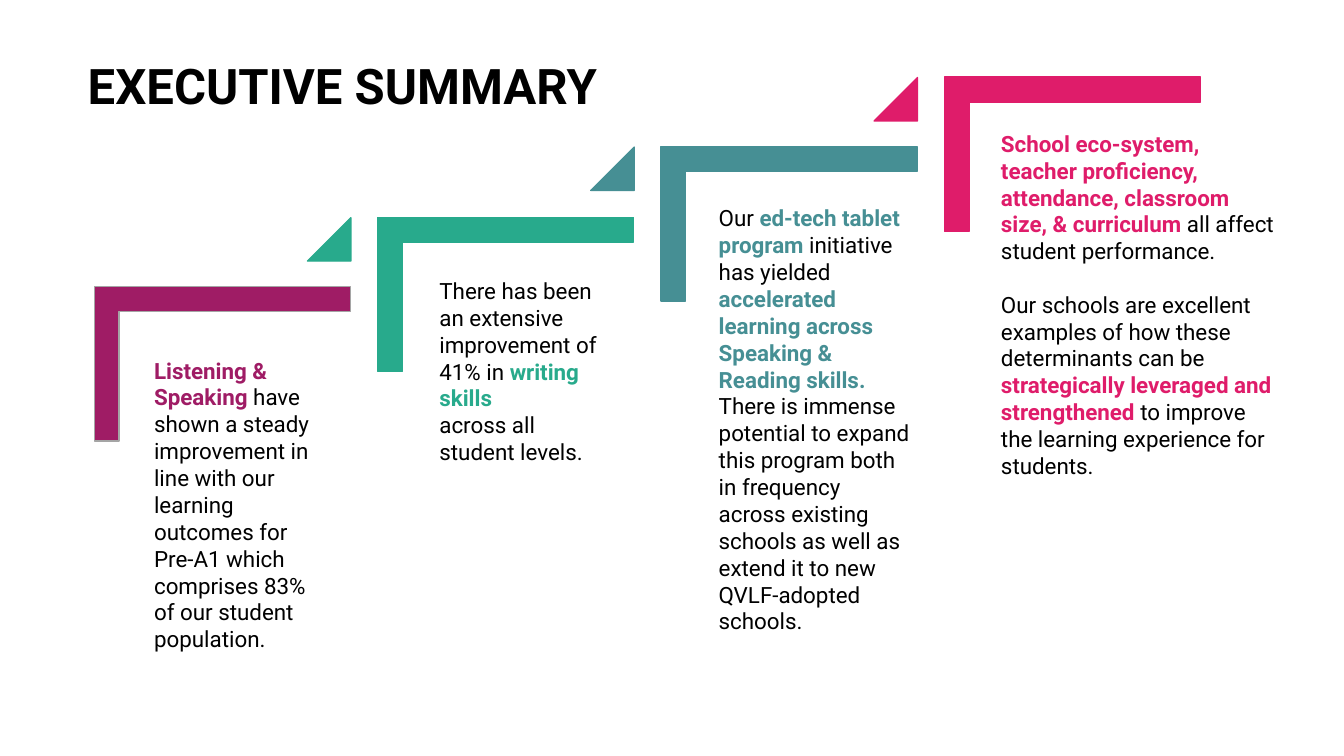
from pptx import Presentation
from pptx import util as u
from pptx.dml.color import RGBColor
from pptx.enum import shapes, text

PX = u.Inches(1) // 100
BLACK = "000000"
PURPLE, GREEN, TEAL, PINK = "9F1C65", "28AA8C", "468F94", "DF1C6A"
STEP_X, STEP_Y = 281, 69.4


def color(value):
    return RGBColor.from_string(value)


def add_run(paragraph, wording, size, hue, bold):
    run = paragraph.add_run()
    run.text = wording
    run.font.name = "Roboto"
    run.font.size = u.Pt(size)
    run.font.bold = bold
    run.font.color.rgb = color(hue)


presentation = Presentation()
presentation.slide_width = 1333 * PX
presentation.slide_height = 750 * PX
slide = presentation.slides.add_slide(presentation.slide_layouts[5])

title = slide.shapes.title
title.left, title.top, title.width, title.height = [n * PX for n in (77, 15, 1150, 145)]
title.text_frame.auto_size = text.MSO_AUTO_SIZE.NONE
title.text_frame.vertical_anchor = text.MSO_ANCHOR.MIDDLE
heading = title.text_frame.paragraphs[0]
heading.alignment = text.PP_ALIGN.LEFT
heading.line_spacing = 0.9
add_run(heading, "EXECUTIVE SUMMARY", 35, BLACK, True)

steps = [
    (PURPLE, "A5A5A5", (143, 349, 189, 333), [
        [("Listening & Speaking ", True),
         ("have shown a steady improvement in line with our learning outcomes for "
          "Pre-A1 which comprises 83% of our student population.", False)],
    ]),
    (GREEN, GREEN, (426, 270, 189, 199), [
        [("There has been an extensive improvement of 41% in ", False),
         ("writing skills", True)],
        [("across all student levels.", False)],
    ]),
    (TEAL, TEAL, (703, 198, 211, 441), [
        [("Our ", False),
         ("ed-tech tablet program ", True),
         ("initiative has yielded ", False),
         ("accelerated learning across Speaking & Reading skills. ", True),
         ("There is immense potential to expand this program both in frequency across "
          "existing schools as well as extend it to new QVLF-adopted schools.", False)],
    ]),
    (PINK, PINK, (983, 124, 293, 360), [
        [("School eco-system, teacher proficiency, attendance, classroom size, "
          "& curriculum ", True),
         ("all affect student performance.", False)],
        [("Our schools are excellent examples of how these determinants can be ", False),
         ("strategically leveraged and strengthened ", True),
         ("to improve the learning experience for students.", False)],
    ]),
]

for index, (accent, outline, box, paragraphs) in enumerate(steps):
    left = 144 + STEP_X * index
    top = 234 - round(STEP_Y * index)
    corner = slide.shapes.add_shape(
        shapes.MSO_SHAPE.CORNER, left * PX, top * PX, 153 * PX, 254 * PX)
    corner.rotation = 90
    corner.adjustments[0] = corner.adjustments[1] = 0.161
    markers = [corner]
    if index > 0:
        triangle = slide.shapes.add_shape(
            shapes.MSO_SHAPE.ISOSCELES_TRIANGLE,
            (left - 120) * PX, (top + 51) * PX, 43 * PX, 43 * PX)
        triangle.adjustments[0] = 1
        markers.append(triangle)
    for marker in markers:
        marker.shadow.inherit = False
        marker.fill.solid()
        marker.fill.fore_color.rgb = color(accent)
        marker.line.color.rgb = color(outline)
        marker.line.width = u.Pt(1)

    frame = slide.shapes.add_textbox(*[n * PX for n in box]).text_frame
    frame.word_wrap = True
    frame.auto_size = text.MSO_AUTO_SIZE.SHAPE_TO_FIT_TEXT
    for number, runs in enumerate(paragraphs):
        paragraph = frame.add_paragraph() if number else frame.paragraphs[0]
        if number and accent == PINK:
            paragraph.space_before = u.Pt(19)
        for wording, strong in runs:
            add_run(paragraph, wording, 16, accent if strong else BLACK, strong)

presentation.save("out.pptx")
